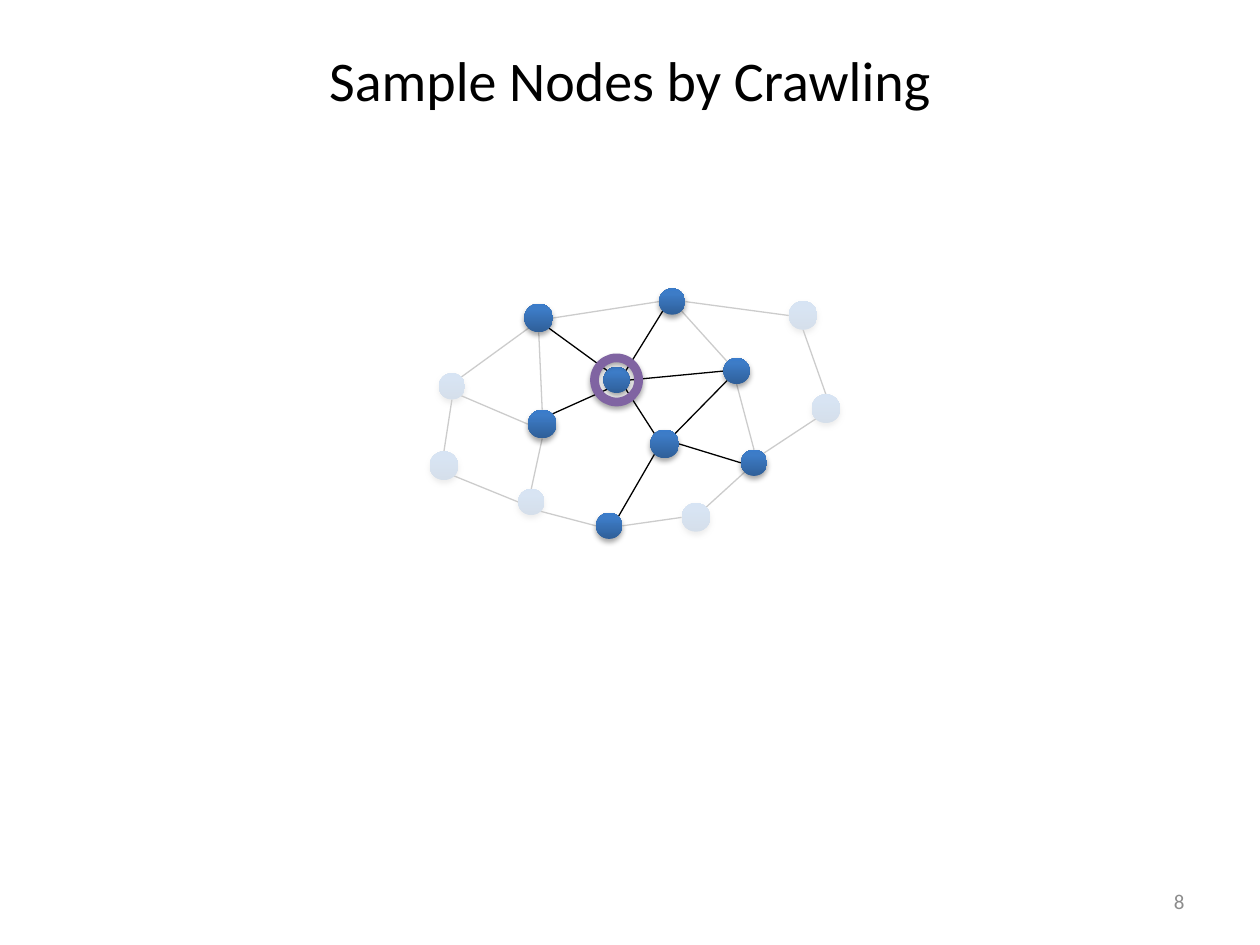
from dataclasses import dataclass
from math import hypot

from lxml import etree
from pptx import Presentation
from pptx.dml.color import RGBColor
from pptx.enum.shapes import MSO_CONNECTOR, MSO_SHAPE
from pptx.enum.text import MSO_ANCHOR, PP_ALIGN
from pptx.oxml import parse_xml
from pptx.oxml.ns import nsdecls, qn
from pptx.util import Cm, Pt

BLACK = RGBColor(0x00, 0x00, 0x00)
WHITE = RGBColor(0xFF, 0xFF, 0xFF)
GREY = RGBColor(0x8C, 0x8C, 0x8C)
PURPLE = RGBColor(0x80, 0x64, 0xA2)
NODE_STOPS = (
    (0, RGBColor(0x2F, 0x5F, 0x99)),
    (80, RGBColor(0x3D, 0x7C, 0xC7)),
    (100, RGBColor(0x3A, 0x7C, 0xCB)),
)
FONT = "Calibri"
SMALL, LARGE, RING = 0.53, 0.58, 0.89

# Directions from a node's centre to the points where edges attach
COMPASS = {
    "n": (0, -1), "ne": (1, -1), "e": (1, 0), "se": (1, 1),
    "s": (0, 1), "sw": (-1, 1), "w": (-1, 0), "nw": (-1, -1),
}


@dataclass(frozen=True)
class Node:
    """A graph node by centre and diameter, in centimetres."""
    x: float
    y: float
    size: float

    def site(self, side: str) -> tuple:
        dx, dy = COMPASS[side]
        reach = self.size / 2 / hypot(dx, dy)
        return Cm(self.x + dx * reach), Cm(self.y + dy * reach)


@dataclass(frozen=True)
class Edge:
    start: str
    start_side: str
    end: str
    end_side: str


@dataclass(frozen=True)
class Veil:
    """A translucent white sheet that fades what lies below it."""
    left: float
    top: float
    width: float
    height: float
    angle: float


NODES = {
    "A": Node(10.71, 10.12, SMALL), "B": Node(9.11, 7.79, SMALL),
    "C": Node(16.65, 8.24, LARGE), "D": Node(14.03, 10.43, LARGE),
    "E": Node(16.19, 6.36, LARGE), "F": Node(8.95, 9.39, LARGE),
    "G": Node(10.93, 8.55, LARGE), "H": Node(13.55, 6.08, SMALL),
    "I": Node(10.86, 6.41, LARGE), "K": Node(14.85, 7.48, SMALL),
    "L": Node(12.28, 10.6, SMALL), "M": Node(15.2, 9.33, SMALL),
    "N": Node(13.4, 8.95, LARGE), "O": Node(12.43, 7.66, SMALL),
}
UNSEEN_EDGES = [
    Edge("M", "n", "K", "s"), Edge("E", "s", "C", "n"),
    Edge("H", "e", "E", "w"), Edge("C", "sw", "M", "ne"),
    Edge("M", "sw", "D", "ne"), Edge("G", "s", "A", "n"),
    Edge("B", "se", "G", "w"), Edge("B", "s", "F", "n"),
    Edge("F", "se", "A", "w"), Edge("A", "se", "L", "w"),
    Edge("L", "e", "D", "w"), Edge("I", "e", "H", "w"),
    Edge("B", "ne", "I", "sw"), Edge("I", "s", "G", "n"),
    Edge("H", "se", "K", "nw"),
]
FIRST_CRAWL = [
    Edge("O", "ne", "H", "sw"), Edge("G", "ne", "O", "sw"),
    Edge("I", "se", "O", "nw"), Edge("O", "e", "K", "w"),
]
SECOND_CRAWL = [
    Edge("O", "se", "N", "nw"), Edge("K", "sw", "N", "ne"),
    Edge("N", "sw", "L", "ne"), Edge("N", "e", "M", "w"),
]
VEILS = [
    Veil(11.46, 4.62, 6.02, 6.45, 345.3),
    Veil(8.36, 6.27, 3.12, 4.98, 342.8),
]


def add_shadow(shape) -> None:
    shape.shadow.inherit = False
    effects = shape._element.spPr.find(qn("a:effectLst"))
    effects.append(parse_xml(
        f'<a:outerShdw {nsdecls("a")} blurRad="{Pt(3.1)}" dist="{Pt(1.8)}" '
        'dir="5400000" rotWithShape="0"><a:srgbClr val="000000">'
        '<a:alpha val="35000"/></a:srgbClr></a:outerShdw>'))


def add_circle(shapes, node: Node, size: float):
    corner = Cm(node.x - size / 2), Cm(node.y - size / 2)
    return shapes.add_shape(MSO_SHAPE.OVAL, *corner, Cm(size), Cm(size))


def add_node(shapes, node: Node) -> None:
    circle = add_circle(shapes, node, node.size)
    circle.line.fill.background()
    stops = "".join(
        f'<a:gs pos="{place * 1000}"><a:srgbClr val="{color}"/></a:gs>'
        for place, color in NODE_STOPS)
    circle._element.spPr.find(qn("a:prstGeom")).addnext(parse_xml(
        f'<a:gradFill {nsdecls("a")} rotWithShape="1"><a:gsLst>{stops}'
        '</a:gsLst><a:lin ang="16200000" scaled="0"/></a:gradFill>'))
    add_shadow(circle)


def add_edge(shapes, edge: Edge) -> None:
    start = NODES[edge.start].site(edge.start_side)
    end = NODES[edge.end].site(edge.end_side)
    line = shapes.add_connector(MSO_CONNECTOR.STRAIGHT, *start, *end)
    line.line.color.rgb = BLACK
    line.line.width = Pt(0.75)
    etree.SubElement(line._element.spPr, qn("a:effectLst"))


def add_graph(shapes, edges: list, names: str) -> None:
    for edge in edges:
        add_edge(shapes, edge)
    for name in names:
        add_node(shapes, NODES[name])


def add_veil(shapes, veil: Veil) -> None:
    sheet = shapes.add_shape(MSO_SHAPE.RECTANGLE, Cm(veil.left), Cm(veil.top),
                             Cm(veil.width), Cm(veil.height))
    sheet.rotation = veil.angle
    sheet.shadow.inherit = False
    sheet.line.fill.background()
    sheet.fill.solid()
    sheet.fill.fore_color.rgb = WHITE
    color = sheet._element.spPr.find(qn("a:solidFill"))[0]
    etree.SubElement(color, qn("a:alpha"), val="80000")


def write(box, text: str, size: int, color: RGBColor, align) -> None:
    box.text_frame.word_wrap = True
    box.text_frame.vertical_anchor = MSO_ANCHOR.MIDDLE
    para = box.text_frame.paragraphs[0]
    para.text = text
    para.alignment = align
    para.font.name = FONT
    para.font.size = Pt(size)
    para.font.color.rgb = color


def main() -> None:
    deck = Presentation()
    deck.slide_width, deck.slide_height = Cm(25.4), Cm(19.05)
    page = deck.slides.add_slide(deck.slide_layouts[5])
    shapes = page.shapes

    # Whole graph, faded by the veils
    add_graph(shapes, UNSEEN_EDGES, "ABCDEF")
    for veil in VEILS:
        add_veil(shapes, veil)

    # Crawled part, in two steps
    add_graph(shapes.add_group_shape().shapes, FIRST_CRAWL, "GHI")
    add_graph(shapes.add_group_shape().shapes, SECOND_CRAWL, "KLMNO")

    # Ring around the starting node
    ring = add_circle(shapes, NODES["O"], RING)
    ring.fill.background()
    ring.line.color.rgb = PURPLE
    ring.line.width = Pt(5)
    add_shadow(ring)

    # Title and page number
    title = shapes.title
    title.left, title.top = Cm(1.27), Cm(0)
    title.width, title.height = Cm(22.86), Cm(3.18)
    write(title, "Sample Nodes by Crawling", 32, BLACK, PP_ALIGN.CENTER)
    number = shapes.add_textbox(Cm(18.2), Cm(17.66), Cm(5.93), Cm(1.01))
    write(number, "8", 12, GREY, PP_ALIGN.RIGHT)

    deck.save("out.pptx")


if __name__ == "__main__":
    main()
